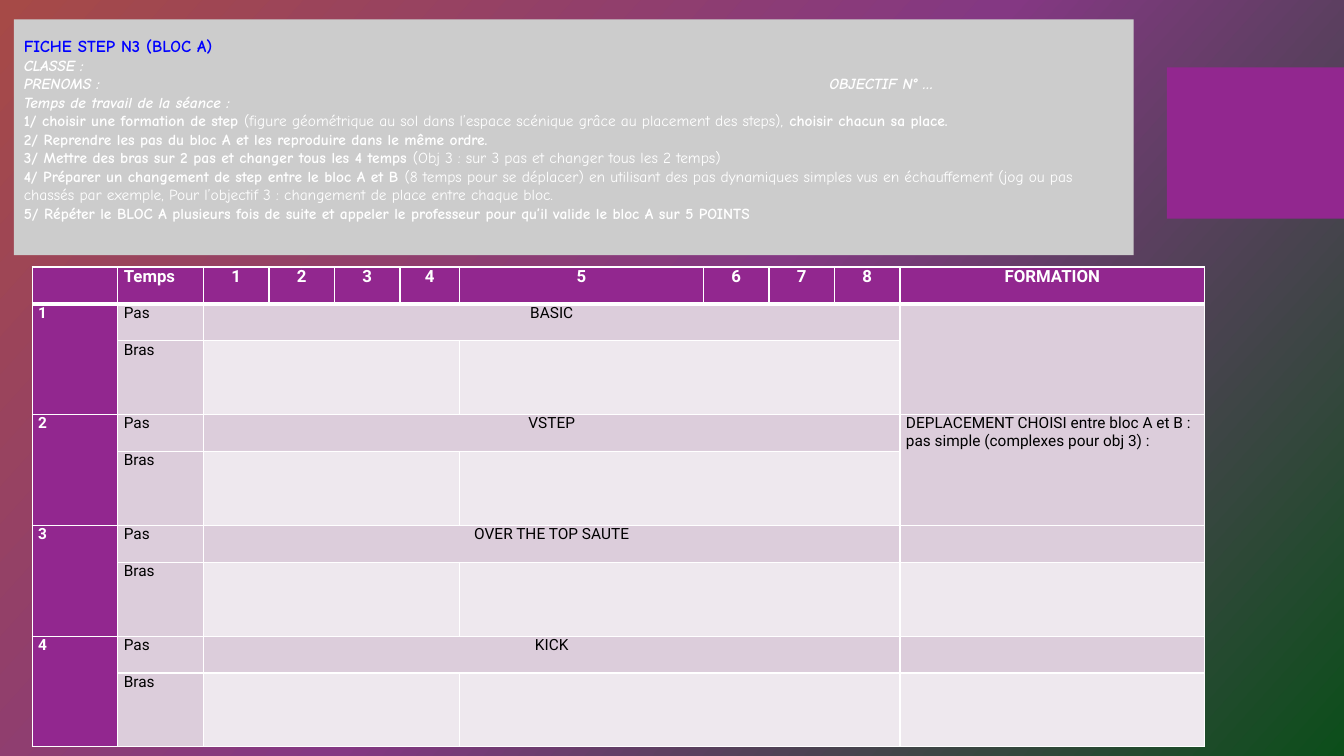
from copy import deepcopy
from pptx import Presentation
from pptx import util as u
from pptx.dml.color import RGBColor
from pptx.enum import shapes, text
from pptx.oxml import parse_xml
from pptx.oxml.ns import nsdecls, qn

COLORS = {
    "red": "A64A47", "violet": "843883", "green": "0C4E1A",
    "purple": "92278F", "mauve": "DCCDDB", "pale": "EEE8EE",
    "grey": "CCCCCC", "blue": "0000FF", "white": "FFFFFF", "black": "000000",
}


def rgb(name):
    return RGBColor.from_string(COLORS[name])


def fill_cell(cell, words, fill, color="black", size=11, bold=False, centred=False, bottom=1):
    cell.margin_left = cell.margin_right = u.Cm(0.15)
    cell.margin_top = cell.margin_bottom = 0
    cell.fill.solid()
    cell.fill.fore_color.rgb = rgb(fill)
    line = cell.text_frame.paragraphs[0]
    line.text = words
    line.alignment = text.PP_ALIGN.CENTER if centred else text.PP_ALIGN.LEFT
    line.font.name, line.font.size, line.font.bold = "Roboto", u.Pt(size), bold
    line.font.color.rgb = rgb(color)
    properties = cell._tc.get_or_add_tcPr()
    for place, (side, width) in enumerate([("L", 1), ("R", 1), ("T", 1), ("B", bottom)]):
        properties.insert(place, parse_xml(
            f'<a:ln{side} {nsdecls("a")} w="{u.Pt(width)}"><a:solidFill>'
            f'<a:srgbClr val="{COLORS["white"]}"/></a:solidFill></a:ln{side}>'))


prs = Presentation()
prs.slide_width, prs.slide_height = u.Cm(33.87), u.Cm(19.05)
slide = prs.slides.add_slide(prs.slide_layouts[6])

backdrop = slide.background.fill
backdrop.gradient()
backdrop.gradient_angle = 360 - 42
stop_list = slide.element.find(".//" + qn("a:gsLst"))
stop_list.append(deepcopy(stop_list[0]))
for stop, (position, color) in zip(backdrop.gradient_stops, [(0, "red"), (0.5, "violet"), (1, "green")]):
    stop.position = position
    stop.color.rgb = rgb(color)

side_block = slide.shapes.add_shape(
    shapes.MSO_SHAPE.RECTANGLE, u.Cm(29.41), u.Cm(1.7), u.Cm(4.46), u.Cm(3.81))
instructions = slide.shapes.add_shape(
    shapes.MSO_SHAPE.RECTANGLE, u.Cm(0.35), u.Cm(0.49), u.Cm(28.22), u.Cm(5.94))
for block, color in [(side_block, "purple"), (instructions, "grey")]:
    block.shadow.inherit = False
    block.fill.solid()
    block.fill.fore_color.rgb = rgb(color)
    block.line.fill.background()

widths = [2.16, 2.16, 1.65, 1.65, 1.65, 1.5, 6.15, 1.65, 1.65, 1.65, 7.68]
heights = [0.93] + [0.93, 1.86] * 4
choreography = slide.shapes.add_table(
    len(heights), len(widths), u.Cm(0.81), u.Cm(6.73),
    u.Cm(sum(widths)), u.Cm(sum(heights))).table
choreography.first_row = choreography.horz_banding = False
for column, width in zip(choreography.columns, widths):
    column.width = u.Cm(width)
for row, height in zip(choreography.rows, heights):
    row.height = u.Cm(height)

headings = ["", "Temps", *"12345678", "FORMATION"]
for col, heading in enumerate(headings):
    fill_cell(choreography.cell(0, col), heading, "purple", "white", 12, True, col > 1, 3)

steps = [
    ("BASIC", ""),
    ("VSTEP", "DEPLACEMENT CHOISI entre bloc A et B : pas simple (complexes pour obj 3) :"),
    ("OVER THE TOP SAUTE", ""),
    ("KICK", ""),
]
for number, (step, formation) in enumerate(steps, 1):
    pas, bras = 2 * number - 1, 2 * number
    for row, label, fill in [(pas, "Pas", "mauve"), (bras, "Bras", "pale")]:
        fill_cell(choreography.cell(row, 0), str(number) if row == pas else "", "purple", "white", bold=True)
        fill_cell(choreography.cell(row, 1), label, "mauve")
        for col in range(2, 10):
            fill_cell(choreography.cell(row, col), step if (row, col) == (pas, 2) else "", fill, centred=True)
        fill_cell(choreography.cell(row, 10), formation if row == pas else "", fill)
    merges = [(pas, 0, bras, 0), (pas, 2, pas, 9), (bras, 2, bras, 5), (bras, 6, bras, 9)]
    if number <= 2:
        merges.append((pas, 10, bras, 10))
    for top, left, bottom, right in merges:
        choreography.cell(top, left).merge(choreography.cell(bottom, right))

slide.shapes._spTree.append(instructions._element)
frame = instructions.text_frame
frame.word_wrap = True
frame.vertical_anchor = text.MSO_ANCHOR.TOP
frame.margin_top = u.Cm(0.41)

BOLD, PLAIN = True, False
instruction_lines = [
    [("FICHE STEP N3 (BLOC A)", BOLD)],
    [("CLASSE :", BOLD)],
    [("PRENOMS :\tOBJECTIF N° …", BOLD)],
    [("Temps de travail de la séance :", BOLD)],
    [("1/ choisir une formation de step ", BOLD),
     ("(figure géométrique au sol dans l’espace scénique grâce au placement des steps), ", PLAIN),
     ("choisir chacun sa place.", BOLD)],
    [("2/ Reprendre les pas du bloc A et les reproduire dans le même ordre.", BOLD)],
    [("3/ Mettre des bras sur 2 pas et changer tous les 4 temps ", BOLD),
     ("(Obj 3 : sur 3 pas et changer tous les 2 temps)", PLAIN)],
    [("4/ Préparer un changement de step entre le bloc A et B ", BOLD),
     ("(8 temps pour se déplacer) en utilisant des pas dynamiques simples vus en échauffement "
      "(jog ou pas chassés par exemple, Pour l’objectif 3 : changement de place entre chaque bloc.", PLAIN)],
    [("5/ Répéter le BLOC A plusieurs fois de suite et appeler le professeur "
      "pour qu’il valide le bloc A sur 5 POINTS", BOLD)],
]
for index, pieces in enumerate(instruction_lines):
    line = frame.paragraphs[0] if index == 0 else frame.add_paragraph()
    line.alignment = text.PP_ALIGN.LEFT
    if index == 2:
        line._p.get_or_add_pPr().append(parse_xml(
            f'<a:tabLst {nsdecls("a")}><a:tab pos="{u.Cm(20.3)}" algn="l"/></a:tabLst>'))
    line.font.name = "Comic Neue"
    line.font.size = u.Pt(12 if index == 0 else 11)
    line.font.italic = 1 <= index <= 3
    line.font.color.rgb = rgb("blue" if index == 0 else "white")
    for words, bold in pieces:
        piece = line.add_run()
        piece.text = words
        piece.font.bold = bold

prs.save("out.pptx")
